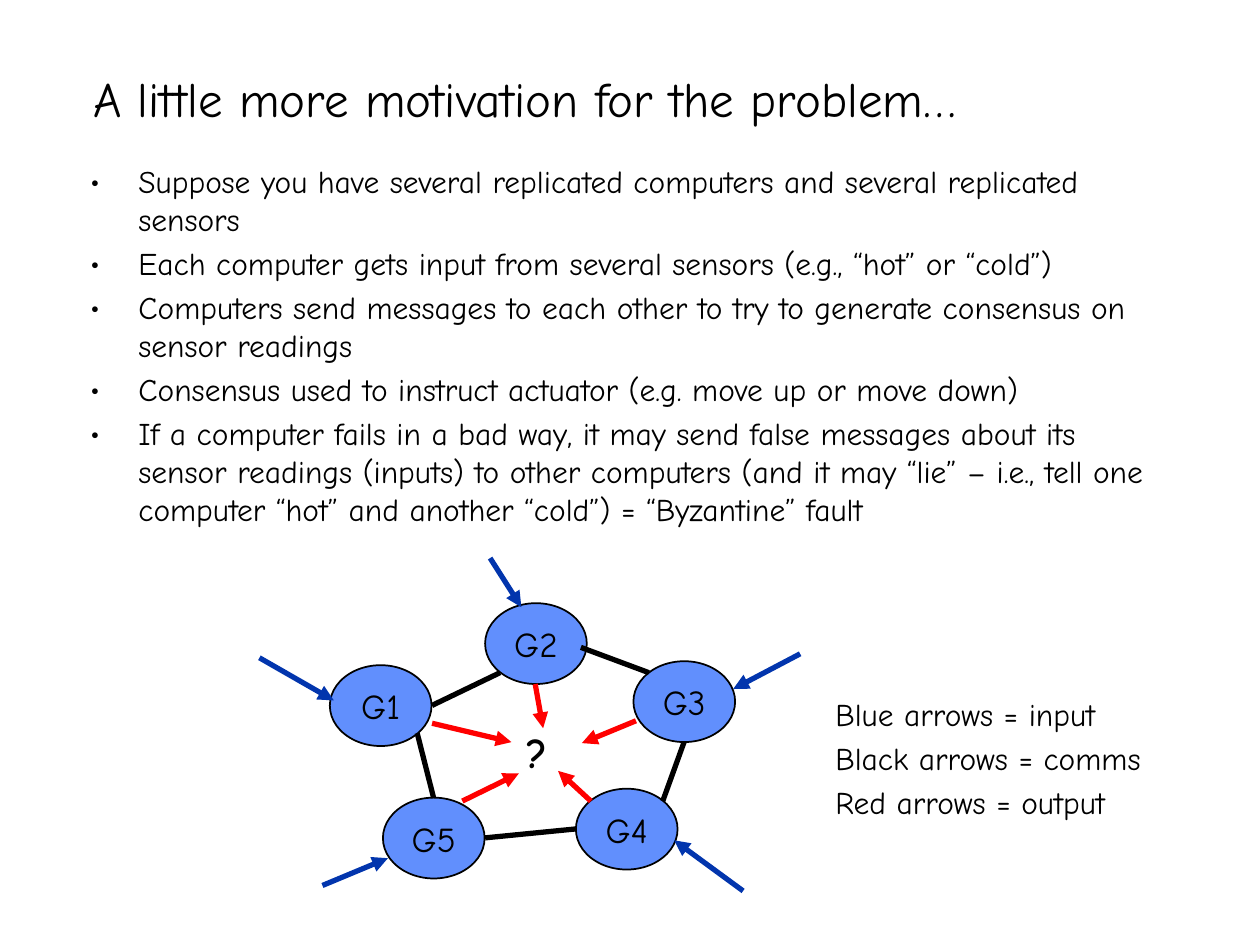
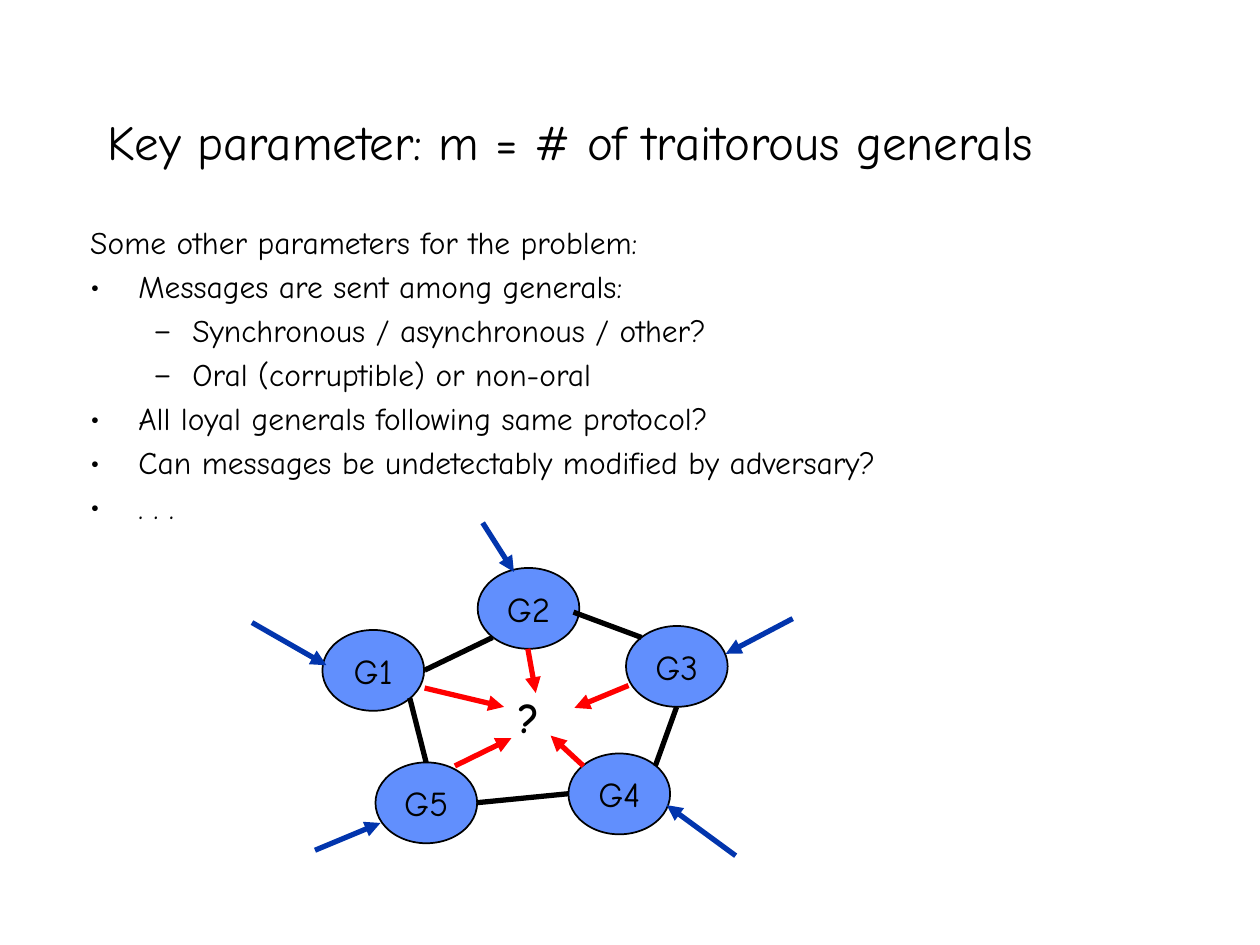
from pptx import Presentation
from pptx.dml.color import RGBColor
from pptx.enum.shapes import MSO_CONNECTOR, MSO_SHAPE
from pptx.enum.text import MSO_ANCHOR, PP_ALIGN
from pptx.oxml.ns import qn
from pptx.util import Cm, Pt
from lxml import etree

LINE, OVAL = MSO_CONNECTOR.STRAIGHT, MSO_SHAPE.OVAL
TOP, MIDDLE = MSO_ANCHOR.TOP, MSO_ANCHOR.MIDDLE
LEFT, CENTER = PP_ALIGN.LEFT, PP_ALIGN.CENTER

FONT = "Comic Neue"
COLORS = {"text": "000000", "general": "618FFD", "comms": "000000",
          "input": "0235AD", "output": "FF0000"}

LEVELS = {"plain": None, "bullet": ("•", 0.97, 0.97), "dash": ("–", 2.06, 0.79)}

SLIDES = [
    {"title": "A little more motivation for the problem…",
     "title_box": (1.63, 0.89, 21.77, 2.18),
     "body": [
         ("bullet", "Suppose you have several replicated computers and several replicated sensors"),
         ("bullet", "Each computer gets input from several sensors (e.g., “hot” or “cold”)"),
         ("bullet", "Computers send messages to each other to try to generate consensus on sensor readings"),
         ("bullet", "Consensus used to instruct actuator (e.g. move up or move down)"),
         ("bullet", "If a computer fails in a bad way, it may send false messages about its sensor "
                    "readings (inputs) to other computers (and it may “lie” – i.e., tell one computer "
                    "“hot” and another “cold”) = “Byzantine” fault"),
     ],
     "body_box": (1.57, 3.15, 21.95, 8.36),
     "diagram_at": (5.23, 11.25),
     "legend": [("plain", "Blue arrows = input"),
                ("plain", "Black arrows = comms"),
                ("plain", "Red arrows = output")]},
    {"title": "Key parameter: m = # of traitorous generals",
     "title_box": (1.91, 1.7, 21.59, 2.29),
     "body": [
         ("plain", "Some other parameters for the problem:"),
         ("bullet", "Messages are sent among generals:"),
         ("dash", "Synchronous / asynchronous / other?"),
         ("dash", "Oral (corruptible) or non-oral"),
         ("bullet", "All loyal generals following same protocol?"),
         ("bullet", "Can messages be undetectably modified by adversary?"),
         ("bullet", ". . ."),
     ],
     "body_box": (1.57, 4.37, 21.77, 13.36),
     "diagram_at": (5.08, 10.54),
     "legend": []},
]
LEGEND_BOX = (16.59, 13.89, 7.9, 3.25)

GENERAL_SIZE = (2.05, 1.63)
GENERALS = {"G1": (1.42, 2.16), "G5": (2.49, 4.83), "G4": (6.38, 4.65),
            "G2": (4.55, 0.91), "G3": (7.54, 2.08)}
QUESTION_BOX = (5.13, 3.28, 0.99, 1.27)
LINKS = {
    "comms": [(3.48, 2.97, 4.85, 2.31), (3.18, 3.53, 3.51, 4.83),
              (6.38, 5.46, 4.55, 5.64), (7.85, 2.31, 6.48, 1.8),
              (8.56, 3.71, 8.13, 4.9)],
    "input": [(10.9, 1.93, 9.55, 2.64), (9.75, 6.71, 8.36, 5.69),
              (1.27, 6.6, 2.59, 6.05), (0, 2.01, 1.5, 2.87),
              (4.65, 0, 5.28, 0.99)],
    "output": [(4.09, 4.9, 5.23, 4.34), (3.48, 3.33, 5.08, 3.71),
               (6.68, 4.9, 6.02, 4.29), (5.56, 2.54, 5.72, 3.43),
               (7.59, 3.28, 6.5, 3.73)],
}


def rgb(name):
    return RGBColor.from_string(COLORS[name])


def write(p, text, size=18, bold=False, align=LEFT, level="plain", before=0):
    r = p.add_run()
    r.text = text
    r.font.name, r.font.size, r.font.bold = FONT, Pt(size), bold
    r.font.color.rgb = rgb("text")
    p.alignment = align
    p.space_before = Pt(before)
    if LEVELS[level]:
        mark, margin, hang = LEVELS[level]
        pPr = p._p.get_or_add_pPr()
        pPr.set("marL", str(Cm(margin)))
        pPr.set("indent", str(-Cm(hang)))
        etree.SubElement(pPr, qn("a:buFont")).set("typeface", FONT)
        etree.SubElement(pPr, qn("a:buChar")).set("char", mark)


def add_text(s, box, lines, anchor=TOP, wrap=True, **fmt):
    tf = s.shapes.add_textbox(*map(Cm, box)).text_frame
    tf.word_wrap, tf.vertical_anchor = wrap, anchor
    for i, (level, text) in enumerate(lines):
        p = tf.add_paragraph() if i else tf.paragraphs[0]
        write(p, text, level=level, **fmt)


def add_general(s, name, x, y):
    sp = s.shapes.add_shape(OVAL, *map(Cm, (x, y, *GENERAL_SIZE)))
    sp.shadow.inherit = False
    sp.fill.solid()
    sp.fill.fore_color.rgb = rgb("general")
    sp.line.color.rgb = rgb("text")
    sp.line.width = Pt(1)
    sp.text_frame.vertical_anchor = MIDDLE
    sp.text_frame.word_wrap = False
    write(sp.text_frame.paragraphs[0], name, size=20, align=CENTER)


def add_link(s, kind, ends):
    link = s.shapes.add_connector(LINE, *map(Cm, ends))
    link.line.color.rgb = rgb(kind)
    link.line.width = Pt(3)
    if kind != "comms":
        etree.SubElement(link.line._get_or_add_ln(), qn("a:tailEnd")).set("type", "triangle")
    etree.SubElement(link._element.spPr, qn("a:effectLst"))


def add_diagram(s, left, top):
    for name, (x, y) in GENERALS.items():
        add_general(s, name, left + x, top + y)
    for kind, links in LINKS.items():
        for x1, y1, x2, y2 in links:
            add_link(s, kind, (left + x1, top + y1, left + x2, top + y2))
    x, y, w, h = QUESTION_BOX
    add_text(s, (left + x, top + y, w, h), [("plain", "?")], wrap=False, size=24, bold=True)


def main():
    prs = Presentation()
    prs.slide_width, prs.slide_height = Cm(25.4), Cm(19.05)
    for content in SLIDES:
        s = prs.slides.add_slide(prs.slide_layouts[6])
        add_text(s, content["title_box"], [("plain", content["title"])], anchor=MIDDLE, size=28)
        add_text(s, content["body_box"], content["body"], before=3.6)
        add_diagram(s, *content["diagram_at"])
        if content["legend"]:
            add_text(s, LEGEND_BOX, content["legend"], before=3.6)
    prs.save("out.pptx")


if __name__ == "__main__":
    main()
